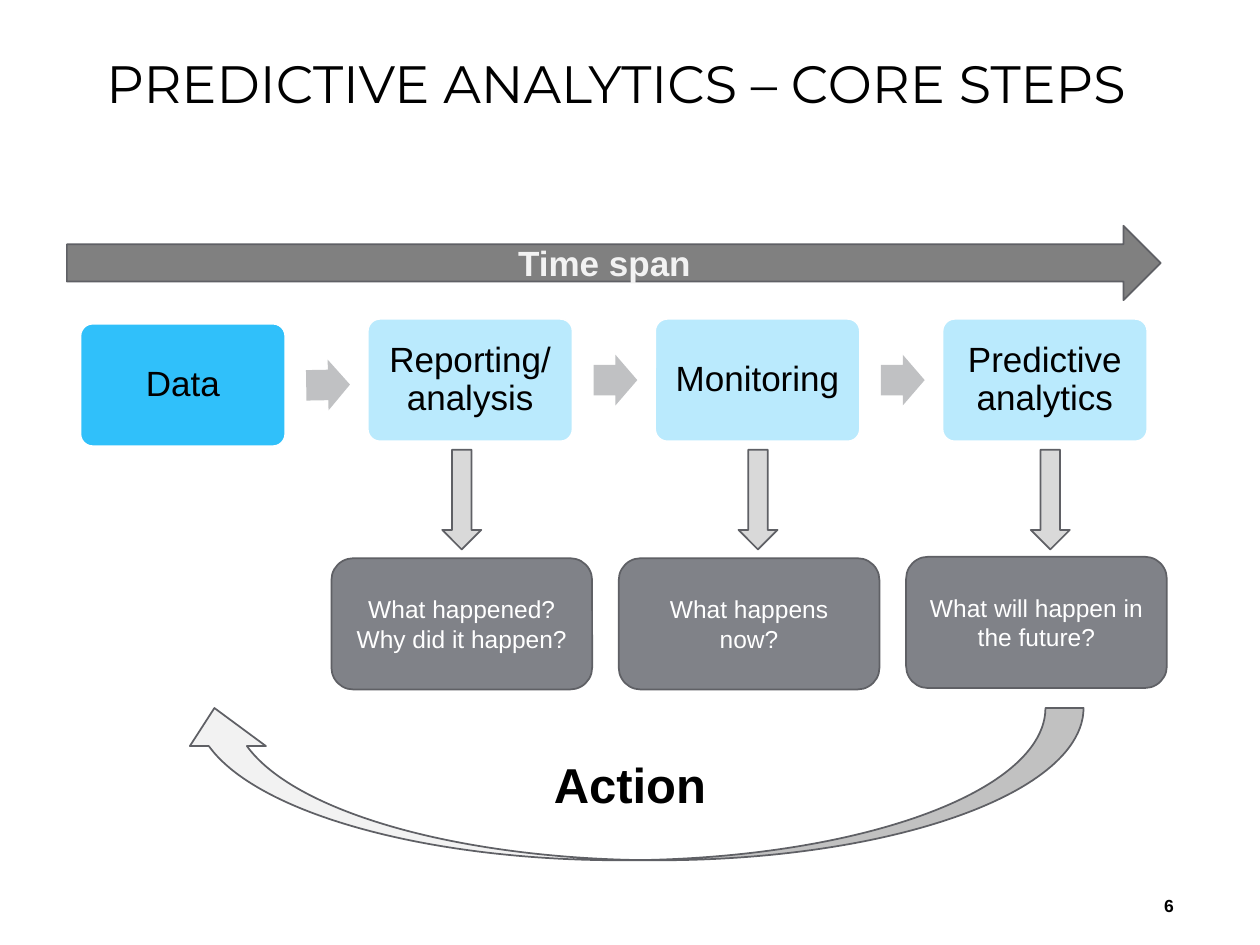
from pptx import Presentation
from pptx.dml.color import RGBColor
from pptx.enum.shapes import MSO_SHAPE
from pptx.enum.text import MSO_ANCHOR, MSO_AUTO_SIZE, PP_ALIGN
from pptx.util import Pt

ROUND_RECT = MSO_SHAPE.ROUNDED_RECTANGLE
RIGHT_ARROW = MSO_SHAPE.RIGHT_ARROW
DOWN_ARROW = MSO_SHAPE.DOWN_ARROW
CURVED_ARROW = MSO_SHAPE.CURVED_UP_ARROW
TOP, MIDDLE = MSO_ANCHOR.TOP, MSO_ANCHOR.MIDDLE
CENTER, RIGHT = PP_ALIGN.CENTER, PP_ALIGN.RIGHT
NO_AUTOFIT = MSO_AUTO_SIZE.NONE

OUTLINE = "5F6065"
STEP_PITCH = 164.2
# label, fill, vertical offset, rotation of the arrow that follows
STEPS = [
    ("Data", "30C0FA", 2.8, 359),
    ("Reporting/analysis", "BAEAFD", 0, 0),
    ("Monitoring", "BAEAFD", 0, 0),
    ("Predictive analytics", "BAEAFD", 0, 0),
]
# question, vertical offset, left of the arrow above it
QUESTIONS = [
    ("What happened? Why did it happen?", 0, 252.7),
    ("What happens now?", 0, 422),
    ("What will happen in the future?", -0.8, 589),
]


def rgb(hex_color):
    return RGBColor.from_string(hex_color)


def write(sp, text, size, color, bold=False, align=CENTER, anchor=MIDDLE, font="Arial"):
    tf = sp.text_frame
    tf.word_wrap = True
    tf.vertical_anchor = anchor
    tf.text = text
    p = tf.paragraphs[0]
    p.alignment = align
    r = p.runs[0]
    r.font.name = font
    r.font.size = Pt(size)
    r.font.bold = bold
    r.font.color.rgb = rgb(color)
    return p


def add_shape(s, kind, left, top, width, height, fill, line=None):
    sp = s.shapes.add_shape(kind, Pt(left), Pt(top), Pt(width), Pt(height))
    sp.shadow.inherit = False
    sp.fill.solid()
    sp.fill.fore_color.rgb = rgb(fill)
    if line:
        sp.line.color.rgb = rgb(line)
        sp.line.width = Pt(1)
    else:
        sp.line.fill.background()
    return sp


def add_title(s, left, top, width, height):
    title = s.shapes.title
    title.left, title.top, title.width, title.height = Pt(left), Pt(top), Pt(width), Pt(height)
    p = write(title, "PREDICTIVE ANALYTICS – CORE STEPS", 30, "000000",
              anchor=TOP, font="Montserrat")
    p.line_spacing = 0.83
    title.text_frame.auto_size = NO_AUTOFIT


def add_page_number(s, left, top, width, height):
    box = s.shapes.add_textbox(Pt(left), Pt(top), Pt(width), Pt(height))
    write(box, "6", 10, "000000", bold=True, align=RIGHT)


def add_time_span(s, left, top, width, height):
    arrow = add_shape(s, RIGHT_ARROW, left, top, width, height, "808080", OUTLINE)
    write(arrow, "Time span", 20, "F2F2F2", bold=True)


def add_steps(s, left, top, width, height):
    for i, (label, fill, offset, rotation) in enumerate(STEPS):
        x, y = left + i * STEP_PITCH, top + offset
        card = add_shape(s, ROUND_RECT, x, y, width, height, fill, "FFFFFF")
        card.adjustments[0] = 0.1
        write(card, label, 20, "000000").line_spacing = 0.9
        # Arrow to the next step
        if i < len(STEPS) - 1:
            arrow = add_shape(s, RIGHT_ARROW, x + 129, y + (height - 29) / 2, 25, 29, "C0C1C3")
            arrow.adjustments[0] = 0.6
            arrow.rotation = rotation


def add_questions(s, left, top, width, height):
    for i, (question, offset, arrow_left) in enumerate(QUESTIONS):
        card = add_shape(s, ROUND_RECT, left + i * STEP_PITCH, top + offset,
                         width, height, "808288", OUTLINE)
        write(card, question, 14, "FFFFFF")
        # Arrow from the step above
        add_shape(s, DOWN_ARROW, arrow_left, top - 62, 22.3, 57, "D9D9D9", OUTLINE)


def add_action(s, left, top, width, height):
    arrow = add_shape(s, CURVED_ARROW, left, top, width, height, "F2F2F2", OUTLINE)
    # Mirror the arrow so that it leads back to the data
    arrow.element.spPr.xfrm.set("flipH", "1")
    write(arrow, "Action", 28, "000000", bold=True)


def main():
    prs = Presentation()
    prs.slide_width, prs.slide_height = Pt(720), Pt(540)
    s = prs.slides.add_slide(prs.slide_layouts[5])
    add_page_number(s, 617.8, 503.3, 60, 28.8)
    add_title(s, 39.6, 31.7, 625, 74)
    add_time_span(s, 38.2, 129, 625, 42.5)
    add_steps(s, 46, 182.2, 117, 70)
    add_questions(s, 189.4, 319, 149, 75)
    add_action(s, 100.8, 404.6, 518.4, 87)
    prs.save("out.pptx")


if __name__ == "__main__":
    main()
